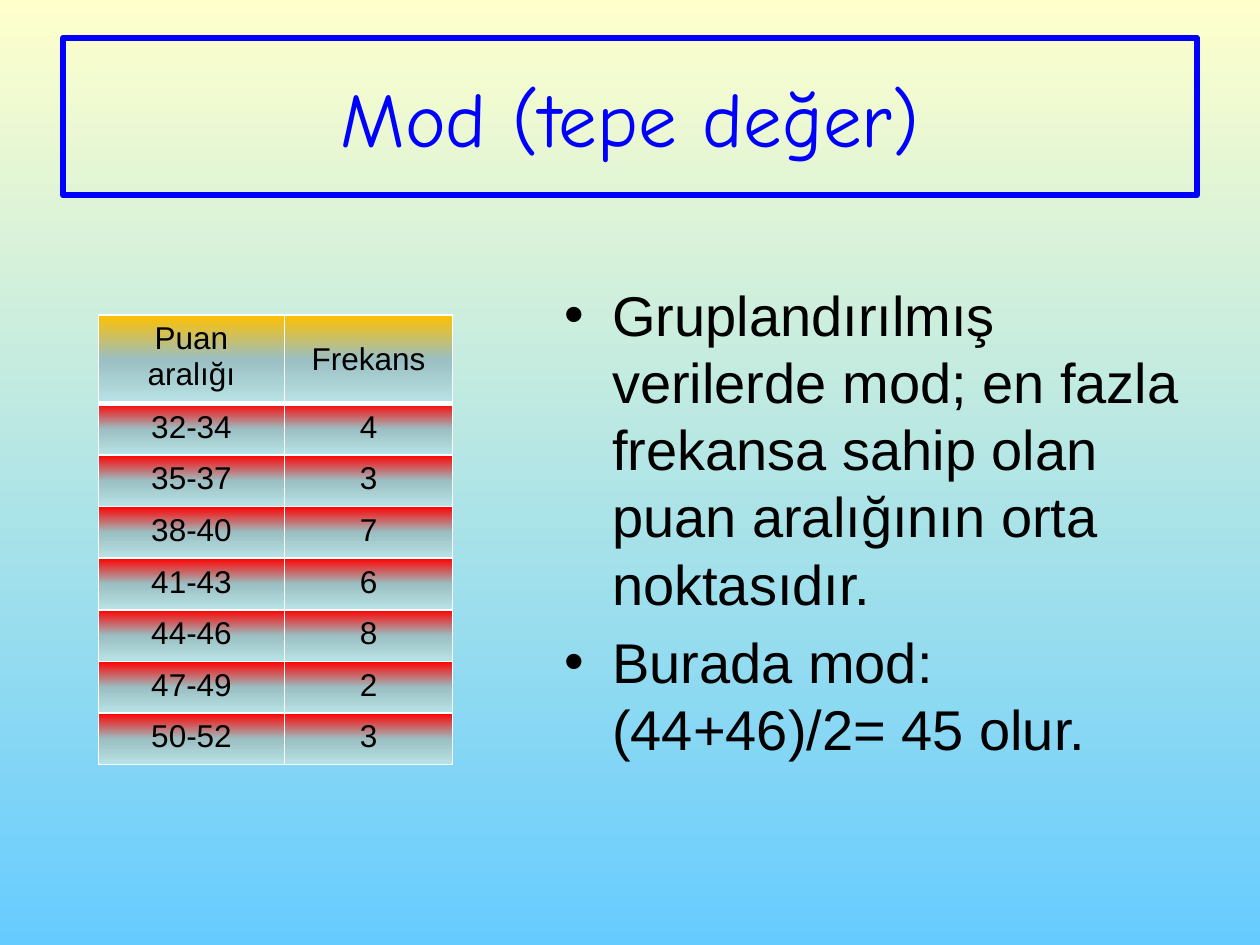
"""Builds a slide that explains the mode of grouped data."""
from lxml import etree
from pptx import Presentation
from pptx import util as u
from pptx.dml.color import RGBColor
from pptx.enum import shapes, text
from pptx.oxml.ns import qn

WIDTH, HEIGHT = u.Inches(10), u.Inches(7.5)
BLUE, BLACK, WHITE = "0000FF", "000000", "FFFFFF"
CELL_TAIL = [(50, "9BBFC2"), (100, "B8E3E6")]
HEADER_STOPS = [(0, "FFC000")] + CELL_TAIL
BODY_STOPS = [(0, "FF0000")] + CELL_TAIL
COLUMNS, HEADER_ROW, BODY_ROW = (1.48, 1.33), 0.7, 0.41
FREQUENCIES = [
    ("Puan aralığı", "Frekans"),
    ("32-34", "4"),
    ("35-37", "3"),
    ("38-40", "7"),
    ("41-43", "6"),
    ("44-46", "8"),
    ("47-49", "2"),
    ("50-52", "3"),
]
EXPLANATION = [
    "Gruplandırılmış verilerde mod; en fazla frekansa sahip olan "
    "puan aralığının orta noktasıdır.",
    "Burada mod: (44+46)/2= 45 olur.",
]


def color(value):
    """Return the colour for a hex string."""
    return RGBColor.from_string(value)


def area(left, top, width, height):
    """Turn shares of the slide's size into lengths."""
    return [round(share * side) for share, side in
            zip((left, top, width, height), (WIDTH, HEIGHT) * 2)]


def write(paragraph, content, size=18, font="Arial", ink=BLACK, align=text.PP_ALIGN.CENTER):
    """Write formatted text into a paragraph."""
    paragraph.alignment = align
    run = paragraph.add_run()
    run.text = content
    run.font.size, run.font.name = u.Pt(size), font
    run.font.color.rgb = color(ink)


def paint_gradient(fill, element, stops):
    """Fill an element from top to bottom with percent and colour stops."""
    fill.gradient()
    fill.gradient_angle = 270
    stop_list = element.find(".//" + qn("a:gsLst"))
    stop_list.clear()
    for percent, value in stops:
        stop = etree.SubElement(stop_list, qn("a:gs"), pos=str(percent * 1000))
        etree.SubElement(stop, qn("a:srgbClr"), val=value)


def add_borders(cell, **widths):
    """Draw white cell borders; widths in points are keyed by side."""
    properties = cell._tc.get_or_add_tcPr()
    for index, side in enumerate("LRTB"):
        line = etree.Element(qn("a:ln" + side), w=str(u.Pt(widths.get(side, 1))))
        solid = etree.SubElement(line, qn("a:solidFill"))
        etree.SubElement(solid, qn("a:srgbClr"), val=WHITE)
        properties.insert(index, line)


def add_title(slide, content):
    """Add the framed title."""
    shape = slide.shapes.add_shape(shapes.MSO_SHAPE.RECTANGLE, *area(0.05, 0.04, 0.9, 1 / 6))
    shape.shadow.inherit = False
    shape.fill.background()
    shape.line.color.rgb = color(BLUE)
    shape.line.width = u.Pt(3.25)
    shape.text_frame.word_wrap = True
    shape.text_frame.vertical_anchor = text.MSO_ANCHOR.MIDDLE
    write(shape.text_frame.paragraphs[0], content, size=44, font="Comic Neue", ink=BLUE)


def add_bullets(slide, items):
    """Add the bulleted explanation."""
    frame = slide.shapes.add_textbox(*area(0.438, 0.29, 0.512, 0.57)).text_frame
    frame.word_wrap = True
    for index, item in enumerate(items):
        paragraph = frame.add_paragraph() if index else frame.paragraphs[0]
        write(paragraph, item, size=32, align=text.PP_ALIGN.LEFT)
        paragraph.space_before = u.Pt(6.4)
        properties = paragraph._p.get_or_add_pPr()
        indent = u.Inches(0.38)
        properties.set("marL", str(indent))
        properties.set("indent", str(-indent))
        etree.SubElement(properties, qn("a:buFont"), typeface="Arial")
        etree.SubElement(properties, qn("a:buChar"), char="•")


def add_frequency_table(slide, rows):
    """Add the table of score ranges and frequencies."""
    heights = [HEADER_ROW] + [BODY_ROW] * (len(rows) - 1)
    table = slide.shapes.add_table(
        len(rows), len(COLUMNS), u.Inches(0.78), u.Inches(2.5),
        u.Inches(sum(COLUMNS)), u.Inches(sum(heights))).table
    for column, width in zip(table.columns, COLUMNS):
        column.width = u.Inches(width)
    for row, height in zip(table.rows, heights):
        row.height = u.Inches(height)
    for row_index, values in enumerate(rows):
        for column_index, value in enumerate(values):
            cell = table.cell(row_index, column_index)
            write(cell.text_frame.paragraphs[0], value)
            paint_gradient(cell.fill, cell._tc, BODY_STOPS if row_index else HEADER_STOPS)
            add_borders(cell, B=1 if row_index else 3, T=3 if row_index == 1 else 1)
    table.cell(0, 1).vertical_anchor = text.MSO_ANCHOR.MIDDLE


def main():
    """Build and save the slide."""
    presentation = Presentation()
    presentation.slide_width, presentation.slide_height = WIDTH, HEIGHT
    slide = presentation.slides.add_slide(presentation.slide_layouts[6])
    paint_gradient(slide.background.fill, slide.element, [(0, "FFFFCC"), (100, "66CCFF")])
    add_title(slide, "Mod (tepe değer)")
    add_bullets(slide, EXPLANATION)
    add_frequency_table(slide, FREQUENCIES)
    presentation.save("out.pptx")


if __name__ == "__main__":
    main()
